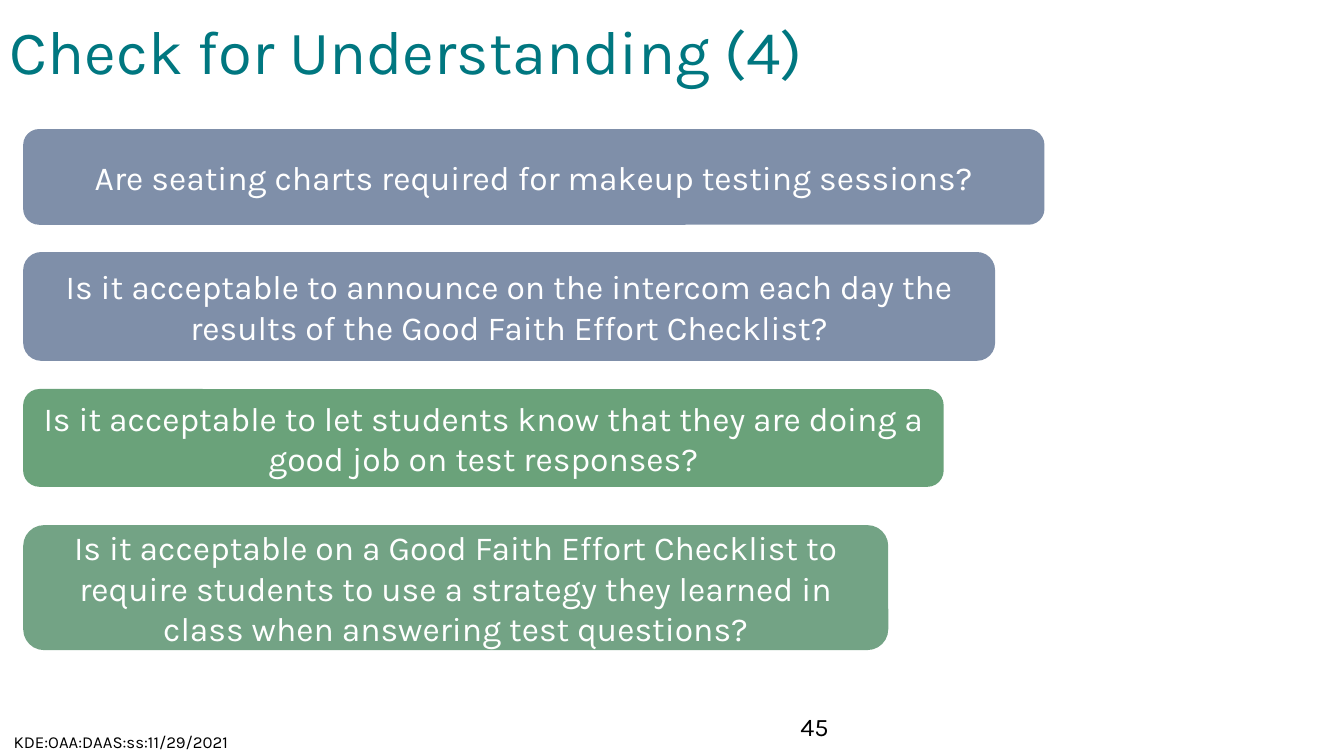
from dataclasses import dataclass

from pptx import Presentation
from pptx import util as u
from pptx.dml.color import RGBColor
from pptx.enum import shapes, text

FONT = "Karla"
TEAL = RGBColor(0x00, 0x77, 0x80)
SLATE = RGBColor(0x7F, 0x8F, 0xA9)
GREEN = RGBColor(0x6A, 0xA2, 0x7A)
SAGE = RGBColor(0x73, 0xA3, 0x85)
WHITE = RGBColor(0xFF, 0xFF, 0xFF)
BLACK = RGBColor(0x00, 0x00, 0x00)

LEFT, CENTER = text.PP_ALIGN.LEFT, text.PP_ALIGN.CENTER
TOP, MIDDLE = text.MSO_ANCHOR.TOP, text.MSO_ANCHOR.MIDDLE
QUESTION_LEFT = 0.23


@dataclass
class Label:
    wording: str
    box: tuple[float, float, float, float]
    size: int
    color: RGBColor
    align: text.PP_ALIGN = LEFT
    anchor: text.MSO_ANCHOR = MIDDLE
    line_spacing: float = 1.0


@dataclass
class Question:
    wording: str
    top: float
    width: float
    height: float
    fill: RGBColor


LABELS = [
    Label("Check for Understanding (4)", (0, 0, 9.87, 1.08), 44, TEAL, line_spacing=0.9),
    Label("KDE:OAA:DAAS:ss:11/29/2021", (-0.35, 7.21, 3.1, 0.29), 12, BLACK, CENTER),
    Label("45", (7.84, 7.01, 0.75, 0.4), 18, BLACK, anchor=TOP),
]

QUESTIONS = [
    Question("Are seating charts required for makeup testing sessions?",
             1.28, 10.13, 0.95, SLATE),
    Question("Is it acceptable to announce on the intercom each day the results "
             "of the Good Faith Effort Checklist?",
             2.5, 9.64, 1.08, SLATE),
    Question("Is it acceptable to let students know that they are doing a good job "
             "on test responses?",
             3.86, 9.13, 0.97, GREEN),
    Question("Is it acceptable on a Good Faith Effort Checklist to require students "
             "to use a strategy they learned in class when answering test questions?",
             5.21, 8.58, 1.24, SAGE),
]


def write(frame, label: Label) -> None:
    frame.text = label.wording
    frame.word_wrap = True
    frame.vertical_anchor = label.anchor
    paragraph = frame.paragraphs[0]
    paragraph.alignment = label.align
    paragraph.line_spacing = label.line_spacing
    font = paragraph.runs[0].font
    font.name = FONT
    font.size = u.Pt(label.size)
    font.color.rgb = label.color


def draw_label(slide, label: Label) -> None:
    caption = slide.shapes.add_textbox(*map(u.Inches, label.box))
    write(caption.text_frame, label)


def draw_question(slide, question: Question) -> None:
    box = (QUESTION_LEFT, question.top, question.width, question.height)
    panel = slide.shapes.add_shape(
        shapes.MSO_SHAPE.ROUNDED_RECTANGLE, *map(u.Inches, box))
    panel.shadow.inherit = False
    panel.fill.solid()
    panel.fill.fore_color.rgb = question.fill
    panel.line.fill.background()
    write(panel.text_frame, Label(question.wording, box, 24, WHITE, CENTER))


def main() -> None:
    deck = Presentation()
    deck.slide_width, deck.slide_height = u.Inches(13.33), u.Inches(7.5)
    slide = deck.slides.add_slide(deck.slide_layouts[6])

    # Title, footer and page number
    for label in LABELS:
        draw_label(slide, label)

    # Question panels, each narrower than the one above
    for question in QUESTIONS:
        draw_question(slide, question)

    deck.save("out.pptx")


if __name__ == "__main__":
    main()
